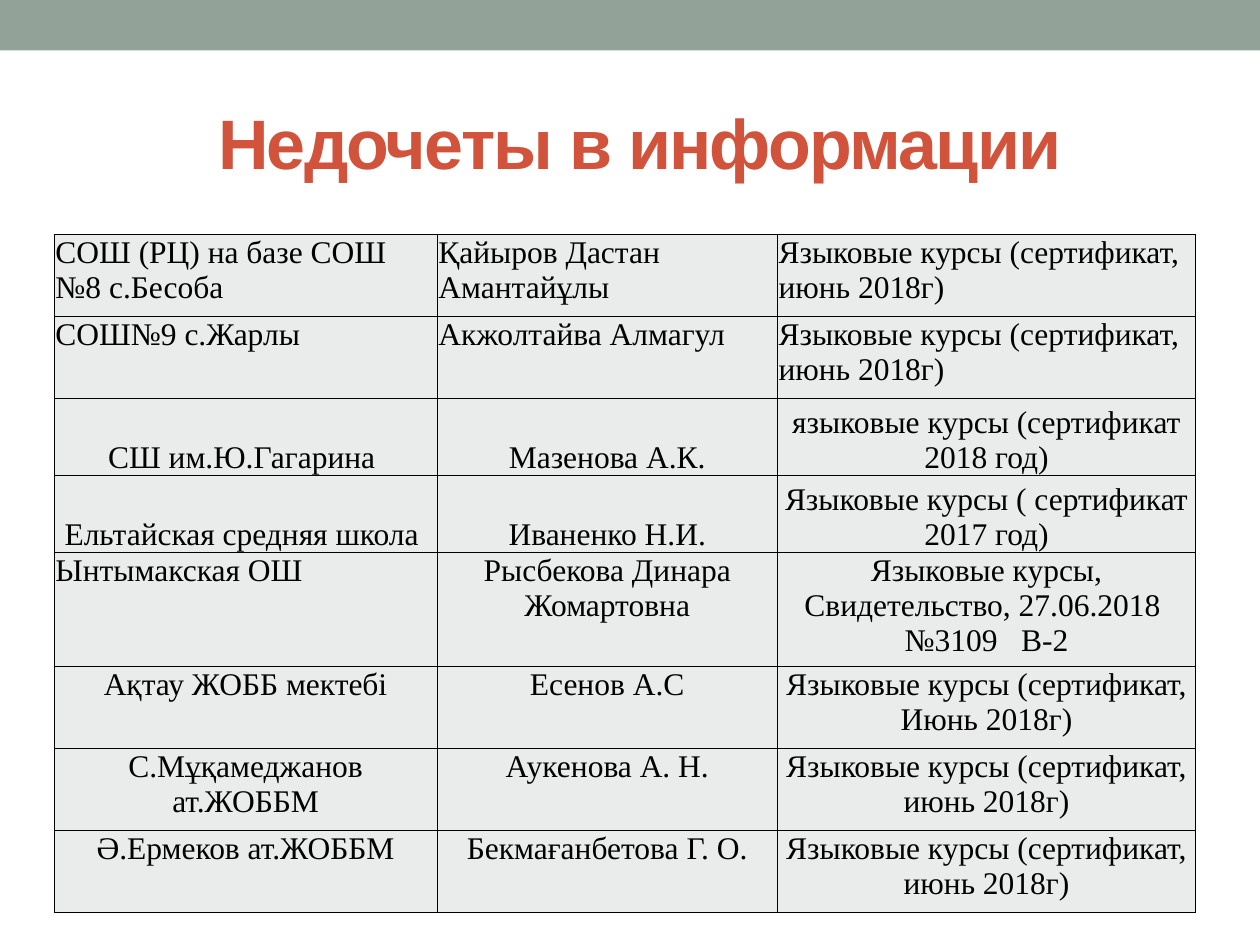
from dataclasses import dataclass

from lxml.etree import SubElement
from pptx import Presentation
from pptx.dml.color import RGBColor
from pptx.enum.shapes import MSO_SHAPE as Shape
from pptx.enum.text import MSO_ANCHOR as Anchor, PP_ALIGN as Align
from pptx.oxml import parse_xml
from pptx.oxml.ns import nsdecls, qn
from pptx.util import Inches, Pt

BAND = RGBColor(0x93, 0xA2, 0x99)
TITLE = RGBColor(0xD2, 0x53, 0x3C)
CELL = RGBColor(0xE9, 0xEC, 0xEB)
BLACK = RGBColor(0x00, 0x00, 0x00)

COLUMN_WIDTHS = (3.04, 2.7, 3.32)
LEFT, CENTER = Align.LEFT, Align.CENTER
JUNE_COURSES = "Языковые курсы (сертификат, июнь 2018г)"


@dataclass(frozen=True)
class Entry:
    school: str
    teacher: str
    course: str
    height: float = 0.65
    aligns: tuple = (CENTER, CENTER, CENTER)
    anchor: Anchor = Anchor.TOP


ENTRIES = (
    Entry("СОШ (РЦ) на базе СОШ №8 с.Бесоба", "Қайыров Дастан Амантайұлы",
          JUNE_COURSES, aligns=(LEFT, LEFT, LEFT)),
    Entry("СОШ№9 с.Жарлы", "Акжолтайва Алмагул",
          JUNE_COURSES, aligns=(LEFT, LEFT, LEFT)),
    Entry("СШ им.Ю.Гагарина ", "Мазенова А.К.",
          "языковые курсы (сертификат 2018 год)", 0.43, anchor=Anchor.BOTTOM),
    Entry("Ельтайская средняя школа ", "Иваненко Н.И.",
          "Языковые курсы ( сертификат 2017 год)", 0.43, anchor=Anchor.BOTTOM),
    Entry("Ынтымакская ОШ", "Рысбекова Динара Жомартовна",
          "Языковые курсы, Свидетельство, 27.06.2018  №3109   В-2",
          0.68, (LEFT, CENTER, CENTER)),
    Entry("Ақтау ЖОББ мектебі", "Есенов А.С",
          "Языковые курсы (сертификат, Июнь 2018г)"),
    Entry("С.Мұқамеджанов ат.ЖОББМ", "Аукенова А. Н.", JUNE_COURSES),
    Entry("Ә.Ермеков ат.ЖОББМ", "Бекмағанбетова Г. О.", JUNE_COURSES),
)


def add_run(paragraph, text: str, font: str, size: float, color: RGBColor,
            bold: bool = False):
    run = paragraph.add_run()
    run.text = text
    run.font.name, run.font.size, run.font.bold = font, Pt(size), bold
    run.font.color.rgb = color
    return run


def set_borders(cell, color: RGBColor, width: float) -> None:
    properties = cell._tc.get_or_add_tcPr()
    for position, side in enumerate(("lnL", "lnR", "lnT", "lnB")):
        line = parse_xml(f'<a:{side} {nsdecls("a")} w="{Pt(width)}"/>')
        fill = SubElement(line, qn("a:solidFill"))
        SubElement(fill, qn("a:srgbClr"), val=str(color))
        properties.insert(position, line)


def fill_cell(cell, text: str, align: Align, anchor: Anchor) -> None:
    cell.fill.solid()
    cell.fill.fore_color.rgb = CELL
    cell.margin_left = cell.margin_right = cell.margin_top = Inches(0.01)
    cell.margin_bottom = 0
    cell.vertical_anchor = anchor
    paragraph = cell.text_frame.paragraphs[0]
    paragraph.alignment = align
    add_run(paragraph, text, "Times New Roman", 18, BLACK)
    set_borders(cell, BLACK, 0.5)


def add_band(slide) -> None:
    band = slide.shapes.add_shape(Shape.RECTANGLE, 0, 0, Inches(10), Inches(0.4))
    band.shadow.inherit = False
    band.fill.solid()
    band.fill.fore_color.rgb = BAND
    band.line.fill.background()


def add_title(slide) -> None:
    heading = slide.shapes.add_textbox(Inches(0.5), Inches(0.58),
                                       Inches(9), Inches(1.08)).text_frame
    heading.word_wrap = True
    heading.vertical_anchor = Anchor.MIDDLE
    paragraph = heading.paragraphs[0]
    paragraph.alignment = CENTER
    for text, bold in ((" ", False), ("Недочеты в информации", True)):
        run = add_run(paragraph, text, "Arial", 40, TITLE, bold)
        run._r.get_or_add_rPr().set("spc", "-100")


def add_entries(slide, entries: tuple) -> None:
    table = slide.shapes.add_table(
        len(entries), len(COLUMN_WIDTHS), Inches(0.43), Inches(1.86),
        Inches(sum(COLUMN_WIDTHS)), Inches(sum(e.height for e in entries))).table
    table.first_row = table.horz_banding = False
    for column, width in zip(table.columns, COLUMN_WIDTHS):
        column.width = Inches(width)
    for row, entry in zip(table.rows, entries):
        row.height = Inches(entry.height)
        texts = (entry.school, entry.teacher, entry.course)
        for cell, text, align in zip(row.cells, texts, entry.aligns):
            fill_cell(cell, text, align, entry.anchor)


def main() -> None:
    deck = Presentation()
    deck.slide_width, deck.slide_height = Inches(10), Inches(7.5)
    slide = deck.slides.add_slide(deck.slide_layouts[6])
    # Top band and heading
    add_band(slide)
    add_title(slide)
    # Schools, teachers and their courses
    add_entries(slide, ENTRIES)
    deck.save("out.pptx")


if __name__ == "__main__":
    main()
